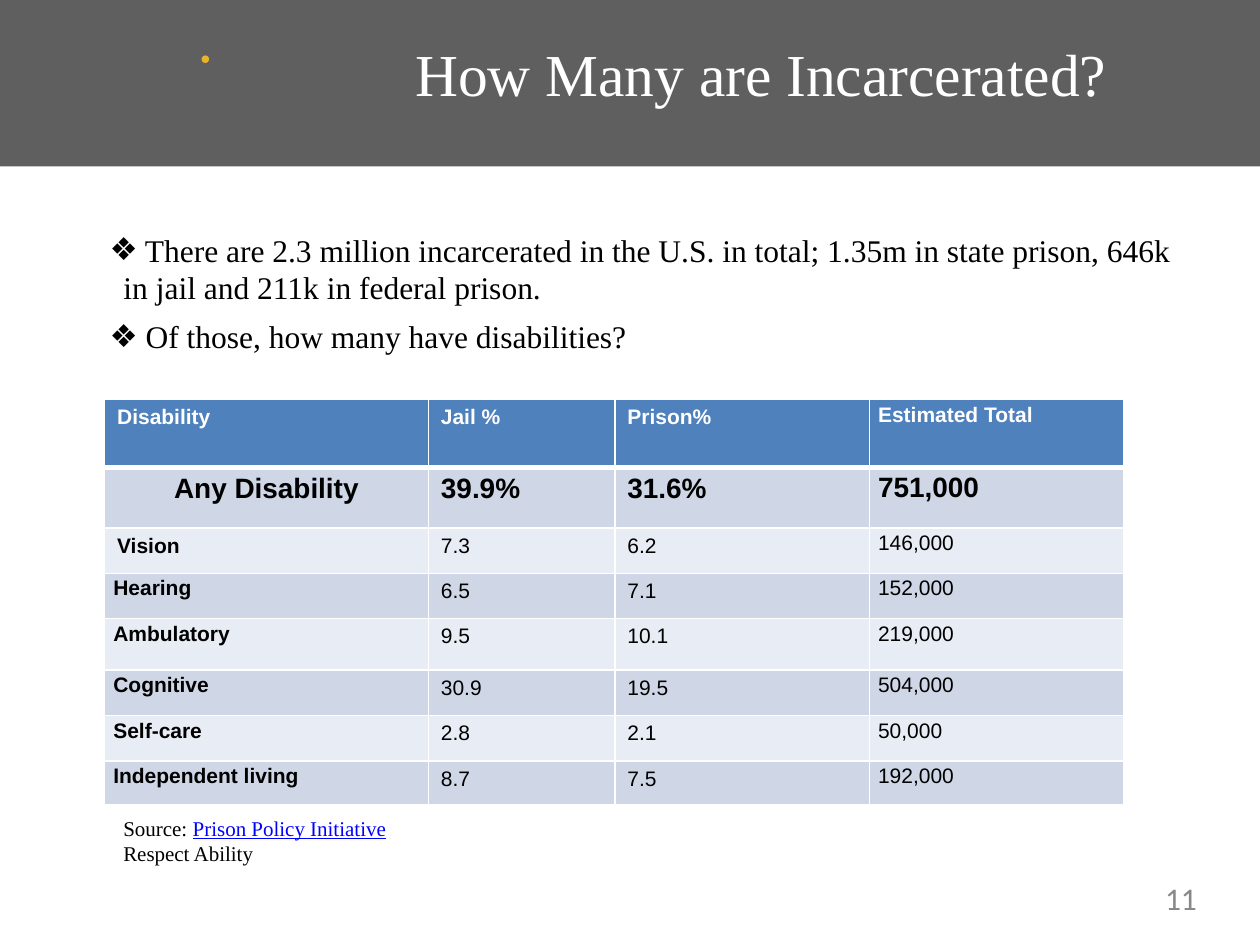
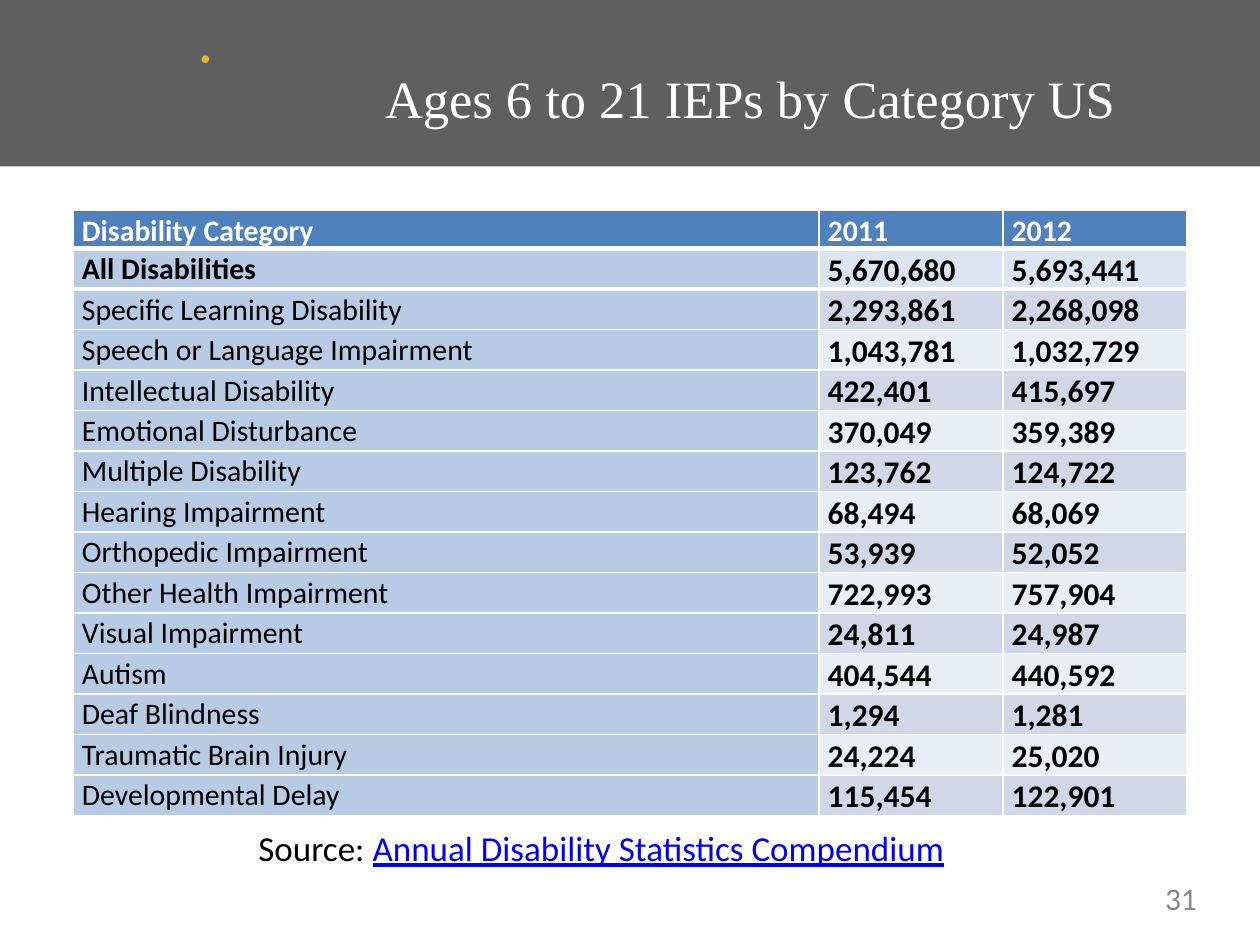
"""Build two slides of disability statistics, each with a banded title and a table."""
from lxml.etree import SubElement
from pptx import Presentation
from pptx.dml.color import RGBColor
from pptx.enum.shapes import MSO_SHAPE
from pptx.enum.text import MSO_ANCHOR, MSO_AUTO_SIZE, PP_ALIGN
from pptx.oxml.ns import qn
from pptx.util import Inches, Pt

deck = Presentation()
deck.slide_width, deck.slide_height = Inches(10), Inches(7.5)
UNIT = deck.slide_width / 100

SERIF, SANS, ROUND = "Times New Roman", "Arial", "Calibri"
BLACK, WHITE, LINK = "000000", "FFFFFF", "0000FF"
BAND, DOT, NUMBER, HEADER = "5F5F5F", "ECB329", "888888", "4F81BD"


def grid(*steps):
    """Turn steps of a grid of 100 columns and 75 rows into lengths."""
    return [round(step * UNIT) for step in steps]


def style(span, font, size, color, bold=False):
    """Format one run."""
    span.font.name, span.font.size, span.font.bold = font, Pt(size), bold
    span.font.color.rgb = RGBColor.from_string(color)


prison_rows = [
    ("Disability", "Jail %", "Prison%", "Estimated Total"),
    ("Any Disability", "39.9%", "31.6%", "751,000"),
    ("Vision", "7.3", "6.2", "146,000"),
    ("Hearing", "6.5", "7.1", "152,000"),
    ("Ambulatory", "9.5", "10.1", "219,000"),
    ("Cognitive", "30.9", "19.5", "504,000"),
    ("Self-care", "2.8", "2.1", "50,000"),
    ("Independent living", "8.7", "7.5", "192,000"),
]
school_rows = [
    ("Disability Category", "2011", "2012"),
    ("All Disabilities", "5,670,680", "5,693,441"),
    ("Specific Learning Disability", "2,293,861", "2,268,098"),
    ("Speech or Language Impairment", "1,043,781", "1,032,729"),
    ("Intellectual Disability", "422,401", "415,697"),
    ("Emotional Disturbance", "370,049", "359,389"),
    ("Multiple Disability", "123,762", "124,722"),
    ("Hearing Impairment", "68,494", "68,069"),
    ("Orthopedic Impairment", "53,939", "52,052"),
    ("Other Health Impairment", "722,993", "757,904"),
    ("Visual Impairment", "24,811", "24,987"),
    ("Autism", "404,544", "440,592"),
    ("Deaf Blindness", "1,294", "1,281"),
    ("Traumatic Brain Injury", "24,224", "25,020"),
    ("Developmental Delay", "115,454", "122,901"),
]

slides = [
    {"title": "How Many are Incarcerated?", "title_size": 34, "number": "11",
     "title_box": (11.8, -0.2, 97.2, 11.9), "body_box": (5, 17.3, 90, 3),
     "rows": prison_rows, "table_box": (8.3, 31.7, 80.8, 32.2),
     "widths": (25.7, 14.8, 20.2, 20.2),
     "heights": (5.4, 4.8, 3.6, 3.6, 4.1, 3.6, 3.6, 3.5),
     "font": SANS, "spacing": 1.15, "stripes": ("E8ECF4", "CFD7E7"), "heavy_rows": 1},
    {"title": "Ages 6 to 21 IEPs by Category US", "title_size": 30, "number": "31",
     "title_box": (10.4, 1.7, 98.3, 12), "body_box": (17.3, 64.6, 60.8, 7.8),
     "rows": school_rows, "table_box": (5.8, 16.7, 88.3, 48),
     "widths": (59.2, 14.6, 14.6), "heights": (3,) + (3.21,) * 14,
     "font": ROUND, "spacing": 1.07, "stripes": ("D0D8E8", "E9EDF4"), "heavy_rows": 2},
]

pages = []
for slide in slides:
    page = deck.slides.add_slide(deck.slide_layouts[1])
    pages.append(page)
    title, body = page.shapes.title, page.placeholders[1]

    for preset, box, color in ((MSO_SHAPE.RECTANGLE, (0, 0, 100, 13.2), BAND),
                               (MSO_SHAPE.OVAL, (16, 4.4, 0.6, 0.6), DOT)):
        shape = page.shapes.add_shape(preset, *grid(*box))
        shape.shadow.inherit = False
        shape.fill.solid()
        shape.fill.fore_color.rgb = RGBColor.from_string(color)
        shape.line.fill.background()
        title.element.addprevious(shape.element)

    for holder, box in ((title, slide["title_box"]), (body, slide["body_box"])):
        holder.left, holder.top, holder.width, holder.height = grid(*box)
        frame = holder.text_frame
        frame.auto_size, frame.word_wrap = MSO_AUTO_SIZE.NONE, True
        frame.margin_left, frame.margin_top, frame.margin_right, frame.margin_bottom = grid(1, 1, 1, 1)
    title.text_frame.text = slide["title"]
    title.text_frame.vertical_anchor = MSO_ANCHOR.MIDDLE
    para = title.text_frame.paragraphs[0]
    para.alignment = PP_ALIGN.CENTER
    style(para.runs[0], SERIF, slide["title_size"], WHITE)

    number = page.shapes.add_textbox(*grid(72, 69.8, 23, 3)).text_frame
    number.word_wrap = True
    number.margin_left = number.margin_top = number.margin_right = number.margin_bottom = 0
    number.text = slide["number"]
    number.paragraphs[0].alignment = PP_ALIGN.RIGHT
    style(number.paragraphs[0].runs[0], ROUND, 18, NUMBER)

    rows = slide["rows"]
    table = page.shapes.add_table(len(rows), len(rows[0]), *grid(*slide["table_box"])).table
    for column, width in zip(table.columns, grid(*slide["widths"])):
        column.width = width
    for row, height in zip(table.rows, grid(*slide["heights"])):
        row.height = height
    prison = rows is prison_rows
    for r, values in enumerate(rows):
        for c, value in enumerate(values):
            cell = table.cell(r, c)
            cell.text_frame.text = value
            para = cell.text_frame.paragraphs[0]
            loose = prison and (c in (1, 2) or c == 0 and r < 3)
            side, edge = grid(1, 0.5) if loose else grid(0.7, 0)
            cell.margin_left = cell.margin_right = side
            cell.margin_top = cell.margin_bottom = edge
            if not loose:
                para.line_spacing = slide["spacing"]
            if prison:
                size = 16 if r == 1 else 12
                bold = r < 2 or c == 0
            else:
                size = 18 if r and c else 17
                bold = r < 2 or c > 0
            if prison and (r, c) == (1, 0):
                para.alignment = PP_ALIGN.CENTER
            style(para.runs[0], slide["font"], size, BLACK if r else WHITE, bold)

            heavy = slide["heavy_rows"]
            for edge_name, weight in (("L", 1), ("R", 1), ("T", 3 if 0 < r <= heavy else 1),
                                      ("B", 3 if r < heavy else 1)):
                line = SubElement(cell._tc.get_or_add_tcPr(), qn(f"a:ln{edge_name}"), w=str(Pt(weight)))
                SubElement(SubElement(line, qn("a:solidFill")), qn("a:srgbClr"), val=WHITE)
            color = slide["stripes"][r % 2]
            if r == 0:
                color = HEADER
            elif not prison and c == 0:
                color = "B7CCE4"
            elif not prison and r == 1:
                color = "DAE5F1"
            cell.fill.solid()
            cell.fill.fore_color.rgb = RGBColor.from_string(color)

prison_page, school_page = pages
facts = prison_page.placeholders[1].text_frame
facts.text = (" There are 2.3 million incarcerated in the U.S. in total; 1.35m in state prison, "
              "646k in jail and 211k in federal prison.\n Of those, how many have disabilities?")
for para, gap in zip(facts.paragraphs, (0, 6.4)):
    properties = para._p.get_or_add_pPr()
    margin, hang = grid(3.8, -1.1)
    properties.set("marL", str(margin))
    properties.set("indent", str(hang))
    SubElement(SubElement(properties, qn("a:buClr")), qn("a:srgbClr"), val=BLACK)
    SubElement(properties, qn("a:buChar"), char="❖")
    para.space_before = Pt(gap)
    style(para.runs[0], SERIF, 18, BLACK)

prison_source = prison_page.shapes.add_textbox(*grid(8.8, 64.2, 23.2, 5)).text_frame
prison_source.word_wrap = True
prison_source.vertical_anchor = MSO_ANCHOR.MIDDLE
prison_source.text = "Source: \nRespect Ability"
style(prison_source.paragraphs[1].runs[0], SERIF, 12, BLACK)

school_source = school_page.placeholders[1].text_frame
school_source.text = "Source: "
properties = school_source.paragraphs[0]._p.get_or_add_pPr()
properties.set("marL", str(grid(2.2)[0]))
properties.set("indent", "0")
SubElement(properties, qn("a:buNone"))
school_source.paragraphs[0].space_before = Pt(0)

for frame, name, font, size in ((prison_source, "Prison Policy Initiative", SERIF, 12),
                                (school_source, "Annual Disability Statistics Compendium", ROUND, 20)):
    para = frame.paragraphs[0]
    style(para.runs[0], font, size, BLACK)
    span = para.add_run()
    span.text = name
    style(span, font, size, LINK)
    span.font.underline = True

deck.save("out.pptx")
